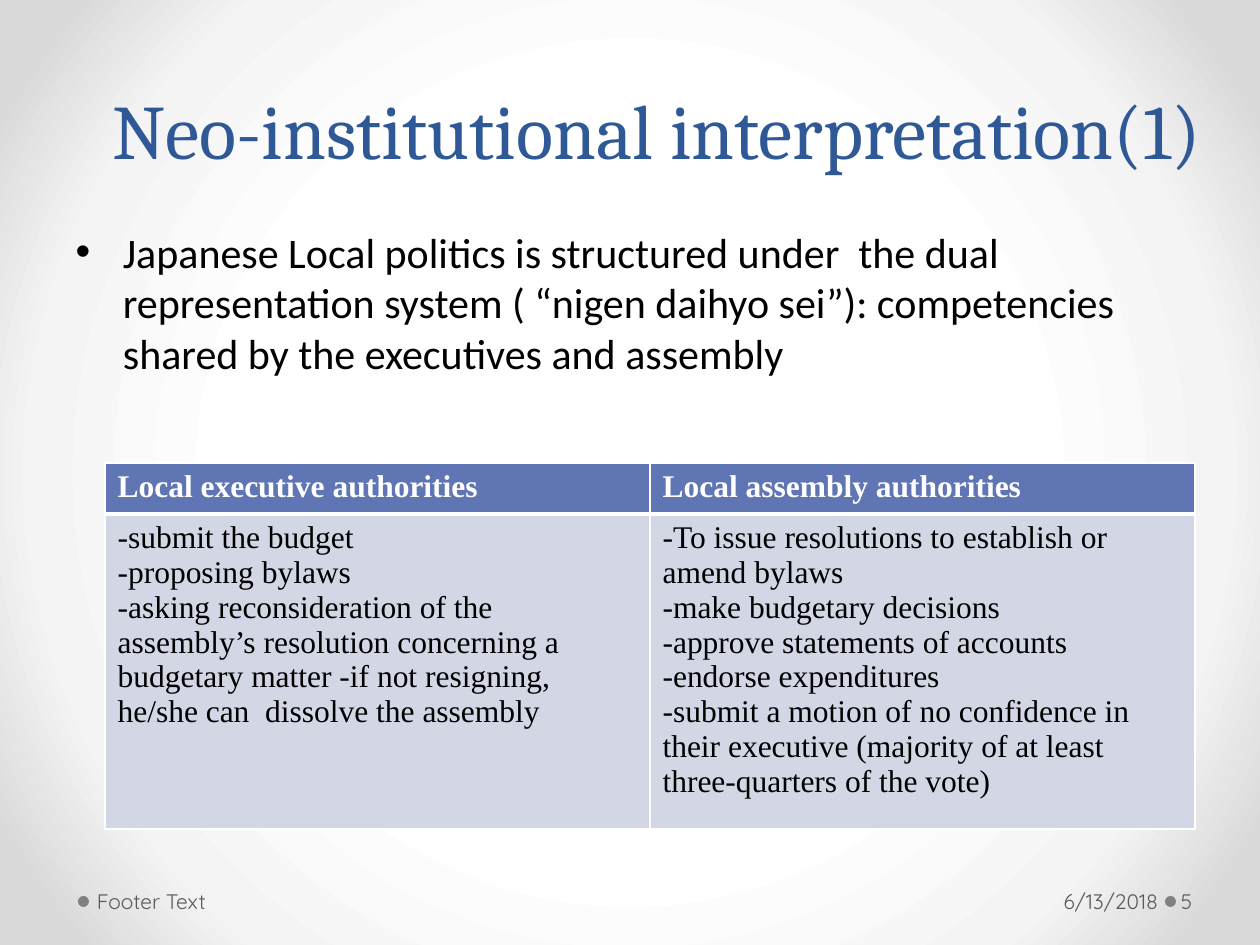
from lxml import etree
from pptx import Presentation
from pptx.dml.color import RGBColor
from pptx.enum.shapes import MSO_SHAPE as Shape
from pptx.enum.text import MSO_ANCHOR as Anchor, MSO_AUTO_SIZE as AutoSize, PP_ALIGN as Align
from pptx.oxml import parse_xml
from pptx.oxml.ns import nsdecls, qn
from pptx.util import Pt

EMU_PER_PX = 914400 / 126


def px(*lengths):
    return [round(length * EMU_PER_PX) for length in lengths]


def style(paragraph, font_name, size, color, bold=False):
    for run in paragraph.runs:
        run.font.name = font_name
        run.font.size = Pt(size)
        run.font.bold = bold
        run.font.color.rgb = RGBColor.from_string(color)


deck = Presentation()
deck.slide_width, deck.slide_height = px(1260, 945)
slide = deck.slides.add_slide(deck.slide_layouts[1])

backdrop = slide.background.fill
backdrop.gradient()
gradient = slide.background._cSld.find(".//" + qn("a:gradFill"))
stops = "".join(
    f'<a:gs pos="{percent * 1000}"><a:srgbClr val="{color}"/></a:gs>'
    for percent, color in [(50, "FFFFFF"), (76, "F4F4F4"), (92, "DADADA")]
)
gradient.getparent().replace(gradient, parse_xml(
    f'<a:gradFill {nsdecls("a")} rotWithShape="1"><a:gsLst>{stops}</a:gsLst>'
    '<a:path path="circle"><a:fillToRect l="50000" t="50000" r="50000" b="50000"/></a:path></a:gradFill>'
))

for dot_left in (78, 1165):
    dot = slide.shapes.add_shape(Shape.OVAL, *px(dot_left, 896, 11, 11))
    dot.shadow.inherit = False
    dot.fill.solid()
    dot.fill.fore_color.rgb = RGBColor.from_string("808080")
    dot.line.fill.background()

title = slide.shapes.title
title.left, title.top, title.width, title.height = px(54, 16, 1206, 165)
heading = title.text_frame
heading.text = "Neo-institutional interpretation(1)"
heading.auto_size = AutoSize.NONE
heading.vertical_anchor = Anchor.BOTTOM
heading.paragraphs[0].alignment = Align.CENTER
heading.paragraphs[0].line_spacing = Pt(58)
style(heading.paragraphs[0], "Cambria", 44, "2F5897")

body = slide.placeholders[1]
body.left, body.top, body.width, body.height = px(63, 220, 1134, 624)
summary = body.text_frame
summary.text = (
    "Japanese Local politics is structured under  the dual representation system "
    "( “nigen daihyo sei”): competencies shared by the executives and assembly"
)
summary.auto_size = AutoSize.NONE
style(summary.paragraphs[0], "Calibri", 24, "000000")

for wording, left, width, inset_left, inset_right, alignment in [
    ("6/13/2018", 877, 287, 13, 6, Align.RIGHT),
    ("Footer Text", 91, 392, 6, 13, Align.LEFT),
    ("5", 1177, 77, 4, 6, Align.LEFT),
]:
    footer = slide.shapes.add_textbox(*px(left, 876, width, 50)).text_frame
    footer.text = wording
    footer.word_wrap = True
    footer.vertical_anchor = Anchor.MIDDLE
    footer.margin_left, footer.margin_right = px(inset_left, inset_right)
    footer.paragraphs[0].alignment = alignment
    style(footer.paragraphs[0], "Quicksand", 12, "595959")

authorities = [
    ("Local executive authorities", [
        "-submit the budget",
        "-proposing bylaws",
        "-asking reconsideration of the assembly’s resolution concerning a budgetary matter "
        "-if not resigning, he/she can  dissolve the assembly",
    ]),
    ("Local assembly authorities", [
        "-To issue resolutions to establish or amend bylaws",
        "-make budgetary decisions",
        "-approve statements of accounts",
        "-endorse expenditures",
        "-submit a motion of no confidence in their executive "
        "(majority of at least three-quarters of the vote)",
    ]),
]
powers = slide.shapes.add_table(2, 2, *px(105, 463, 1090, 342)).table
powers.rows[0].height, powers.rows[1].height = px(51, 291)
for column, (branch, duties) in enumerate(authorities):
    for row, (wording, fill, color, heavy_edge) in enumerate([
        (branch, "6076B4", "FFFFFF", "lnB"),
        ("\n".join(duties), "D2D6E5", "000000", "lnT"),
    ]):
        cell = powers.cell(row, column)
        cell.text_frame.text = wording
        for paragraph in cell.text_frame.paragraphs:
            style(paragraph, "Times New Roman", 18, color, bold=row == 0)
        properties = cell._tc.get_or_add_tcPr()
        for edge in ("lnL", "lnR", "lnT", "lnB"):
            border = etree.SubElement(properties, qn(f"a:{edge}"), w=str(Pt(3 if edge == heavy_edge else 1)))
            paint = etree.SubElement(border, qn("a:solidFill"))
            etree.SubElement(paint, qn("a:srgbClr"), val="FFFFFF")
        cell.fill.solid()
        cell.fill.fore_color.rgb = RGBColor.from_string(fill)

deck.save("out.pptx")
